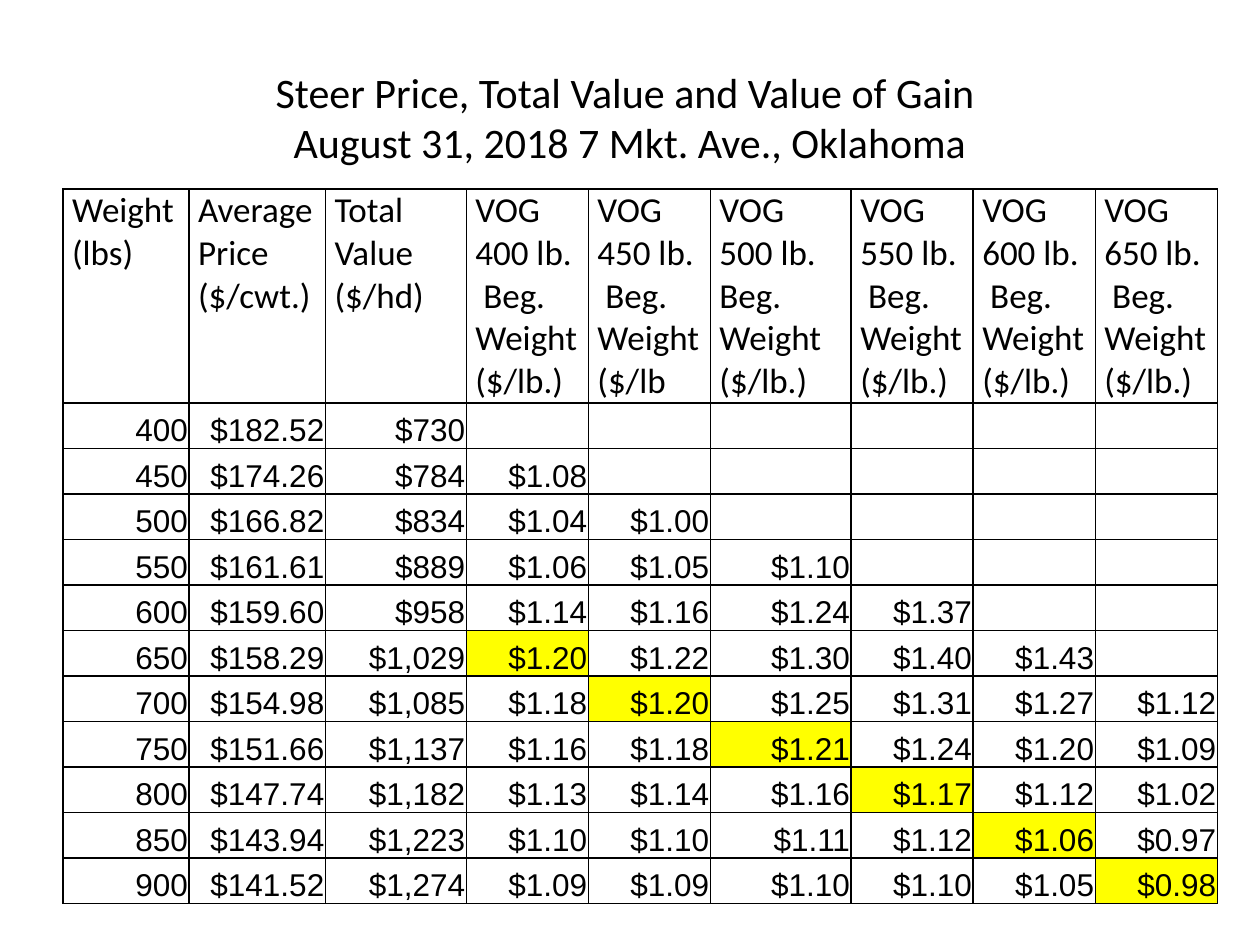
import dataclasses

import pptx
import pptx.dml.color
import pptx.enum.text
import pptx.oxml
import pptx.oxml.ns
import pptx.util

Pt = pptx.util.Pt
ALIGN = pptx.enum.text.PP_ALIGN
ANCHOR = pptx.enum.text.MSO_ANCHOR


@dataclasses.dataclass(frozen=True)
class Theme:
    ink: str = "000000"
    paper: str = "FFFFFF"
    highlight: str = "FFFF00"
    heading_font: str = "Calibri"
    number_font: str = "Arial"
    title_size: float = 24
    header_size: float = 20
    number_size: float = 18
    border_width: float = 1


THEME = Theme()

TITLE_LINES = [
    "Steer Price, Total Value and Value of Gain ",
    "August 31, 2018 7 Mkt. Ave., Oklahoma",
]
BEGINNING_WEIGHTS = [400, 450, 500, 550, 600, 650]
HIGHLIGHTED_GAIN = 250
COLUMN_WIDTHS = [72, 78, 80.5, 69.75, 69.75, 80.5, 69.75, 69.75, 69.75]
HEADER_HEIGHT = 122.4
ROW_HEIGHT = 26
HEADER_MARGINS = (5.2, 0, 5.2, 0)
NUMBER_MARGINS = (0.72, 0.72, 0.72, 0)

# Weight, average price, total value, then value of gain per beginning weight
STEERS = [
    (400, "$182.52", "$730"),
    (450, "$174.26", "$784", "$1.08"),
    (500, "$166.82", "$834", "$1.04", "$1.00"),
    (550, "$161.61", "$889", "$1.06", "$1.05", "$1.10"),
    (600, "$159.60", "$958", "$1.14", "$1.16", "$1.24", "$1.37"),
    (650, "$158.29", "$1,029", "$1.20", "$1.22", "$1.30", "$1.40", "$1.43"),
    (700, "$154.98", "$1,085", "$1.18", "$1.20", "$1.25", "$1.31", "$1.27", "$1.12"),
    (750, "$151.66", "$1,137", "$1.16", "$1.18", "$1.21", "$1.24", "$1.20", "$1.09"),
    (800, "$147.74", "$1,182", "$1.13", "$1.14", "$1.16", "$1.17", "$1.12", "$1.02"),
    (850, "$143.94", "$1,223", "$1.10", "$1.10", "$1.11", "$1.12", "$1.06", "$0.97"),
    (900, "$141.52", "$1,274", "$1.09", "$1.09", "$1.10", "$1.10", "$1.05", "$0.98"),
]


def rgb(value):
    return pptx.dml.color.RGBColor.from_string(value)


def add_run(paragraph, text, font_name, size):
    run = paragraph.add_run()
    run.text = text
    run.font.name = font_name
    run.font.size = Pt(size)
    run.font.color.rgb = rgb(THEME.ink)


def add_title(slide):
    frame = slide.shapes.add_textbox(Pt(36), Pt(21.6), Pt(648), Pt(90)).text_frame
    frame.word_wrap = True
    frame.vertical_anchor = ANCHOR.MIDDLE
    paragraph = frame.paragraphs[0]
    paragraph.alignment = ALIGN.CENTER
    for index, line in enumerate(TITLE_LINES):
        if index:
            paragraph.add_line_break()
        add_run(paragraph, line, THEME.heading_font, THEME.title_size)


def set_borders(cell):
    properties = cell._tc.get_or_add_tcPr()
    for position, side in enumerate(("lnL", "lnR", "lnT", "lnB")):
        border = pptx.oxml.parse_xml(
            f'<a:{side} {pptx.oxml.ns.nsdecls("a")} w="{Pt(THEME.border_width)}">'
            f'<a:solidFill><a:srgbClr val="{THEME.ink}"/></a:solidFill></a:{side}>'
        )
        properties.insert(position, border)


def style_cell(cell, fill, margins, anchor):
    cell.fill.solid()
    cell.fill.fore_color.rgb = rgb(fill)
    cell.margin_left, cell.margin_top, cell.margin_right, cell.margin_bottom = map(Pt, margins)
    cell.vertical_anchor = anchor
    set_borders(cell)


def fill_header_cell(cell, lines):
    style_cell(cell, THEME.paper, HEADER_MARGINS, ANCHOR.TOP)
    frame = cell.text_frame
    for index, line in enumerate(lines):
        paragraph = frame.add_paragraph() if index else frame.paragraphs[0]
        add_run(paragraph, line, THEME.heading_font, THEME.header_size)


def fill_number_cell(cell, text, highlighted):
    fill = THEME.highlight if highlighted else THEME.paper
    style_cell(cell, fill, NUMBER_MARGINS, ANCHOR.BOTTOM)
    paragraph = cell.text_frame.paragraphs[0]
    paragraph.alignment = ALIGN.RIGHT
    if text:
        add_run(paragraph, text, THEME.number_font, THEME.number_size)


def header_texts():
    headers = [["Weight (lbs)"], ["Average Price ($/cwt.)"], ["Total Value ($/hd)"]]
    for weight in BEGINNING_WEIGHTS:
        unit = "($/lb" if weight == 450 else "($/lb.)"
        headers.append(["VOG", f"{weight} lb.  Beg. Weight", unit])
    return headers


def add_price_table(slide):
    row_heights = [HEADER_HEIGHT] + [ROW_HEIGHT] * len(STEERS)
    table = slide.shapes.add_table(
        len(row_heights), len(COLUMN_WIDTHS), Pt(36), Pt(108),
        Pt(sum(COLUMN_WIDTHS)), Pt(sum(row_heights)),
    ).table
    table.first_row = False
    table.horz_banding = False
    for column, width in zip(table.columns, COLUMN_WIDTHS):
        column.width = Pt(width)
    for row, height in zip(table.rows, row_heights):
        row.height = Pt(height)

    headers = header_texts()
    for column, lines in enumerate(headers):
        fill_header_cell(table.cell(0, column), lines)

    first_gain_column = len(headers) - len(BEGINNING_WEIGHTS)
    for row, steer in enumerate(STEERS, start=1):
        for column in range(len(headers)):
            text = str(steer[column]) if column < len(steer) else ""
            gain_index = column - first_gain_column
            highlighted = (
                gain_index >= 0
                and steer[0] - BEGINNING_WEIGHTS[gain_index] == HIGHLIGHTED_GAIN
            )
            fill_number_cell(table.cell(row, column), text, highlighted)


def main():
    presentation = pptx.Presentation()
    presentation.slide_width = Pt(720)
    presentation.slide_height = Pt(540)
    slide = presentation.slides.add_slide(presentation.slide_layouts[6])
    add_title(slide)
    add_price_table(slide)
    presentation.save("out.pptx")


if __name__ == "__main__":
    main()
